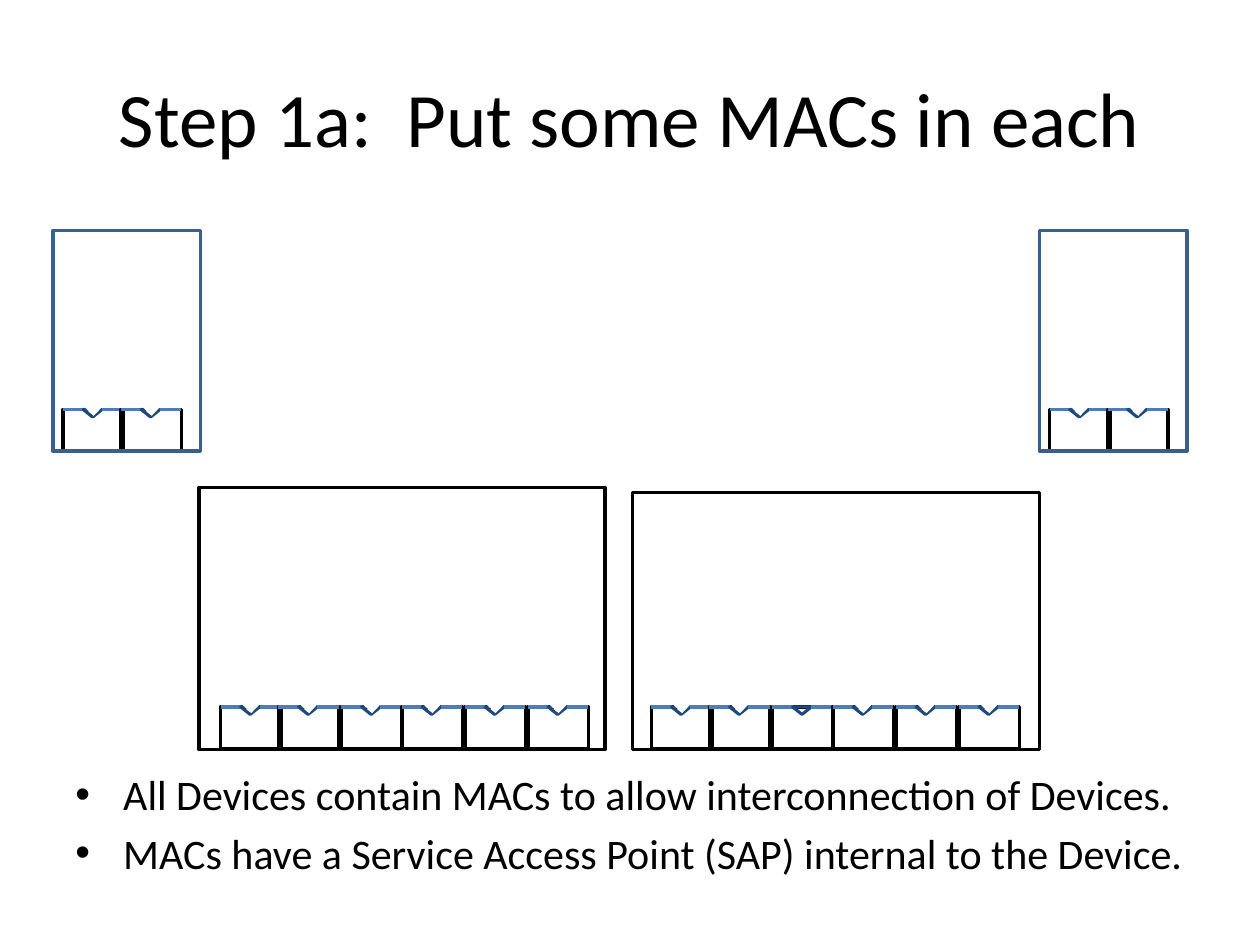
from dataclasses import dataclass

from lxml import etree
from pptx import Presentation
from pptx import util as u
from pptx.dml.color import RGBColor
from pptx.enum import shapes, text
from pptx.oxml.ns import qn

BLACK, WHITE = "000000", "FFFFFF"
END_DEVICE_BLUE, SAP_BLUE, NOTCH_BLUE = "3A5F8C", "4B7EBC", "1F497D"
MAC_OFFSETS = (0, 0.46, 0.96, 1.44, 1.94, 2.44)
MAC_WIDTH, MAC_HEIGHT = 0.48, 0.33
NOTCH_LEFT, NOTCH_RIGHT = 0.16, 0.31


@dataclass(frozen=True)
class Device:
    left: float
    top: float
    width: float
    height: float
    outline: str
    first_mac: float
    mac_top: float
    mac_count: int
    unmasked_mac: int | None = None


DEVICES = (
    Device(5.02, 3.91, 3.23, 2.04, BLACK, 5.17, 5.61, 6, unmasked_mac=2),
    Device(1.58, 3.87, 3.22, 2.08, BLACK, 1.75, 5.61, 6),
    Device(0.42, 1.83, 1.17, 1.75, END_DEVICE_BLUE, 0.5, 3.25, 2),
    Device(8.25, 1.83, 1.17, 1.75, END_DEVICE_BLUE, 8.33, 3.25, 2),
)
POINTS = (
    "All Devices contain MACs to allow interconnection of Devices.",
    "MACs have a Service Access Point (SAP) internal to the Device.",
)


def colour(value: str) -> RGBColor:
    """Turn a hex string into a colour."""
    return RGBColor.from_string(value)


def add_outline(parent, preset, box: tuple, line: str | None, weight: float = 2, fill: str | None = None):
    """Draw a preset shape with an optional line and fill."""
    outline = parent.add_shape(preset, *map(u.Inches, box))
    outline.shadow.inherit = False
    if fill:
        outline.fill.solid()
        outline.fill.fore_color.rgb = colour(fill)
    else:
        outline.fill.background()
    if line:
        outline.line.color.rgb = colour(line)
        outline.line.width = u.Pt(weight)
    else:
        outline.line.fill.background()
    return outline


def add_sap_edge(parent, start: float, end: float, y: float) -> None:
    """Draw one horizontal part of a service access point."""
    edge = parent.add_connector(shapes.MSO_CONNECTOR.STRAIGHT, *map(u.Inches, (start, y, end, y)))
    edge.line.color.rgb = colour(SAP_BLUE)
    edge.line.width = u.Pt(2)
    etree.SubElement(edge._element.spPr, qn("a:effectLst"))


def add_mac(slide, left: float, top: float, masked: bool) -> None:
    """Draw a MAC with its notched service access point as a group."""
    mac = slide.shapes.add_group_shape().shapes
    preset = shapes.MSO_SHAPE
    add_outline(mac, preset.RECTANGLE, (left, top, MAC_WIDTH, MAC_HEIGHT), BLACK)
    add_sap_edge(mac, left, left + NOTCH_LEFT, top)
    notch_box = (left + NOTCH_LEFT, top, NOTCH_RIGHT - NOTCH_LEFT, 0.06)
    notch = add_outline(mac, preset.ISOSCELES_TRIANGLE, notch_box, NOTCH_BLUE, 1.75)
    notch.rotation = 180
    add_sap_edge(mac, left + NOTCH_RIGHT, left + MAC_WIDTH, top)
    if masked:
        mask_box = (left + NOTCH_LEFT, top - 0.03, 0.16, 0.08)
        mask = add_outline(mac, preset.ISOSCELES_TRIANGLE, mask_box, None, fill=WHITE)
        mask.rotation = 180
        mask.adjustments[0] = 0.48


def add_device(slide, device: Device) -> None:
    """Draw a device frame around its row of MACs."""
    for index, offset in enumerate(MAC_OFFSETS[:device.mac_count]):
        add_mac(slide, device.first_mac + offset, device.mac_top, index != device.unmasked_mac)
    frame = (device.left, device.top, device.width, device.height)
    add_outline(slide.shapes, shapes.MSO_SHAPE.RECTANGLE, frame, device.outline)


def add_text(slide, box: tuple, lines: tuple, size: float, anchor):
    """Add a text box with one paragraph per line."""
    frame = slide.shapes.add_textbox(*map(u.Inches, box)).text_frame
    frame.word_wrap = True
    frame.vertical_anchor = anchor
    frame.text = "\n".join(lines)
    for paragraph in frame.paragraphs:
        paragraph.font.name = "Calibri"
        paragraph.font.size = u.Pt(size)
        paragraph.font.color.rgb = colour(BLACK)
    return frame


def add_bullet(paragraph) -> None:
    """Give a paragraph a round bullet and a hanging indent."""
    paragraph.space_before = u.Pt(4.8)
    properties = paragraph._p.get_or_add_pPr()
    indent = u.Inches(0.38)
    properties.set("marL", str(indent))
    properties.set("indent", str(-indent))
    bullet_font = etree.Element(qn("a:buFont"), typeface="Arial")
    bullet = etree.Element(qn("a:buChar"), char="•")
    default_run = properties.find(qn("a:defRPr"))
    default_run.addprevious(bullet_font)
    default_run.addprevious(bullet)


def main() -> None:
    """Build and save the slide."""
    deck = Presentation()
    deck.slide_width, deck.slide_height = u.Inches(10), u.Inches(7.5)
    slide = deck.slides.add_slide(deck.slide_layouts[6])
    title = add_text(slide, (0.5, 0.3, 9, 1.25), ("Step 1a:  Put some MACs in each",), 44, text.MSO_ANCHOR.MIDDLE)
    title.paragraphs[0].alignment = text.PP_ALIGN.CENTER
    for device in DEVICES:
        add_device(slide, device)
    points = add_text(slide, (0.5, 6.05, 9, 1.2), POINTS, 24, text.MSO_ANCHOR.TOP)
    for paragraph in points.paragraphs:
        add_bullet(paragraph)
    deck.save("out.pptx")


if __name__ == "__main__":
    main()
